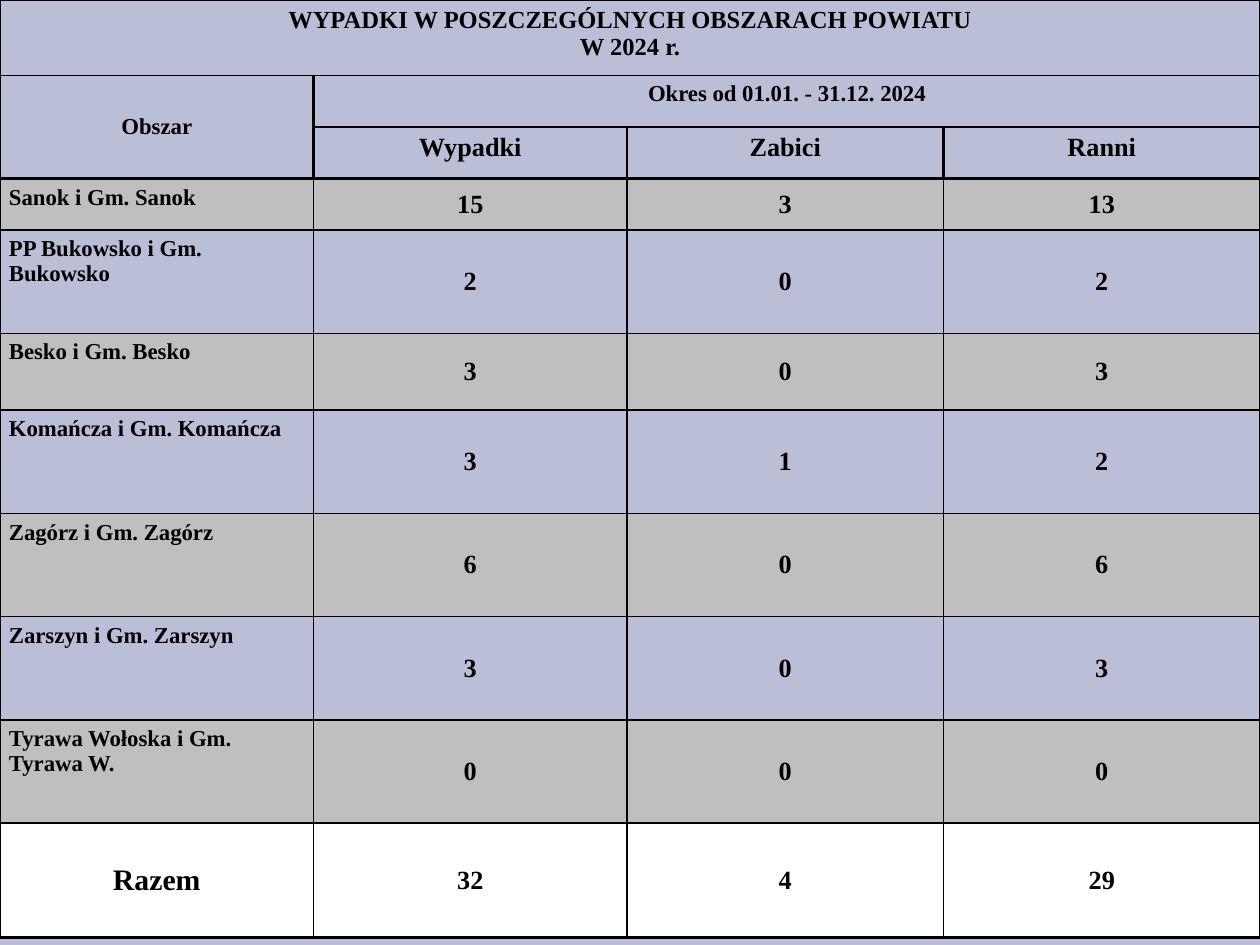
"""Build the slide with the 2024 accident table for the areas of the district."""
from lxml.etree import SubElement
from pptx import Presentation
from pptx.dml.color import RGBColor
from pptx.enum.text import MSO_ANCHOR, PP_ALIGN
from pptx.oxml.ns import qn
from pptx.util import Cm, Pt

COLORS = {"background": "BABED6", "band": "BFBFBF", "total": "FFFFFF", "ink": "000000"}
FONT = "Times New Roman"
THIN, THICK = Pt(0.96), Pt(1.47)
COLUMN_WIDTHS = [6.32, 6.32, 6.38, 6.38]
ROW_HEIGHTS = [1.52, 1.04, 1.04, 1.04, 2.08, 1.55, 2.08, 2.08, 2.08, 2.08, 2.31]
ROWS = [
    ["WYPADKI W POSZCZEGÓLNYCH OBSZARACH POWIATU\nW 2024 r.", "", "", ""],
    ["Obszar", "Okres od 01.01. - 31.12. 2024", "", ""],
    ["", "Wypadki", "Zabici", "Ranni"],
    ["Sanok i Gm. Sanok", "15", "3", "13"],
    ["PP Bukowsko i Gm. Bukowsko", "2", "0", "2"],
    ["Besko i Gm. Besko", "3", "0", "3"],
    ["Komańcza i Gm. Komańcza", "3", "1", "2"],
    ["Zagórz i Gm. Zagórz", "6", "0", "6"],
    ["Zarszyn i Gm. Zarszyn", "3", "0", "3"],
    ["Tyrawa Wołoska i Gm. Tyrawa W.", "0", "0", "0"],
    ["Razem", "32", "4", "29"],
]
HEADER_ROWS = 3
LAST_ROW, LAST_COLUMN = len(ROWS) - 1, len(COLUMN_WIDTHS) - 1
THICK_LEVELS = (0, 2, HEADER_ROWS, len(ROWS))


def set_borders(cell, widths):
    """Draw the cell sides with the given line widths."""
    properties = cell._tc.get_or_add_tcPr()
    for side, width in widths.items():
        line = SubElement(properties, qn(f"a:ln{side}"), w=str(int(width)))
        fill = SubElement(line, qn("a:solidFill"))
        SubElement(fill, qn("a:srgbClr"), val=COLORS["ink"])


def format_text(cell, size, alignment):
    """Format all the text in the cell."""
    for paragraph in cell.text_frame.paragraphs:
        paragraph.alignment = alignment
        for run in paragraph.runs:
            run.font.name = FONT
            run.font.size = Pt(size)
            run.font.bold = True
            run.font.color.rgb = RGBColor.from_string(COLORS["ink"])


presentation = Presentation()
presentation.slide_width, presentation.slide_height = Cm(25.4), Cm(19.05)
slide = presentation.slides.add_slide(presentation.slide_layouts[6])
slide.background.fill.solid()
slide.background.fill.fore_color.rgb = RGBColor.from_string(COLORS["background"])

shape = slide.shapes.add_table(
    len(ROWS), len(COLUMN_WIDTHS), 0, 0, Cm(sum(COLUMN_WIDTHS)), Cm(sum(ROW_HEIGHTS))
)
table = shape.table
table.first_row = table.horz_banding = False
for column, width in zip(table.columns, COLUMN_WIDTHS):
    column.width = Cm(width)
for row, height in zip(table.rows, ROW_HEIGHTS):
    row.height = Cm(height)

table.cell(0, 0).merge(table.cell(0, LAST_COLUMN))
table.cell(1, 0).merge(table.cell(2, 0))
table.cell(1, 1).merge(table.cell(1, LAST_COLUMN))

for row_index, texts in enumerate(ROWS):
    for column_index, text in enumerate(texts):
        cell = table.cell(row_index, column_index)
        in_header = row_index < HEADER_ROWS
        is_total = row_index == LAST_ROW
        is_area = column_index == 0 and not in_header and not is_total
        set_borders(cell, {
            "L": THICK if in_header or column_index == 0 else THIN,
            "R": THICK if in_header or column_index == LAST_COLUMN else THIN,
            "T": THICK if row_index in THICK_LEVELS else THIN,
            "B": THICK if row_index + 1 in THICK_LEVELS else THIN,
        })
        if is_total or (not in_header and row_index % 2):
            cell.fill.solid()
            color = COLORS["total" if is_total else "band"]
            cell.fill.fore_color.rgb = RGBColor.from_string(color)
        else:
            cell.fill.background()
        if row_index != 1:
            cell.margin_left = cell.margin_right = Cm(0.18 if row_index else 0.13)
        cell.margin_top = cell.margin_bottom = Cm(0.13)
        centred = (not in_header and not is_area) or text == "Obszar"
        cell.vertical_anchor = MSO_ANCHOR.MIDDLE if centred else MSO_ANCHOR.TOP
        if text:
            cell.text_frame.text = text
            if row_index == 0:
                size = 14
            elif row_index == 1 or is_area:
                size = 13
            else:
                size = 17 if is_total and column_index == 0 else 15
            format_text(cell, size, PP_ALIGN.LEFT if is_area else PP_ALIGN.CENTER)

for paragraph in table.cell(0, 0).text_frame.paragraphs:
    properties = paragraph._p.get_or_add_pPr()
    properties.set("marL", str(Cm(1.24)))
    properties.set("indent", str(-Cm(1.24)))

presentation.save("out.pptx")
